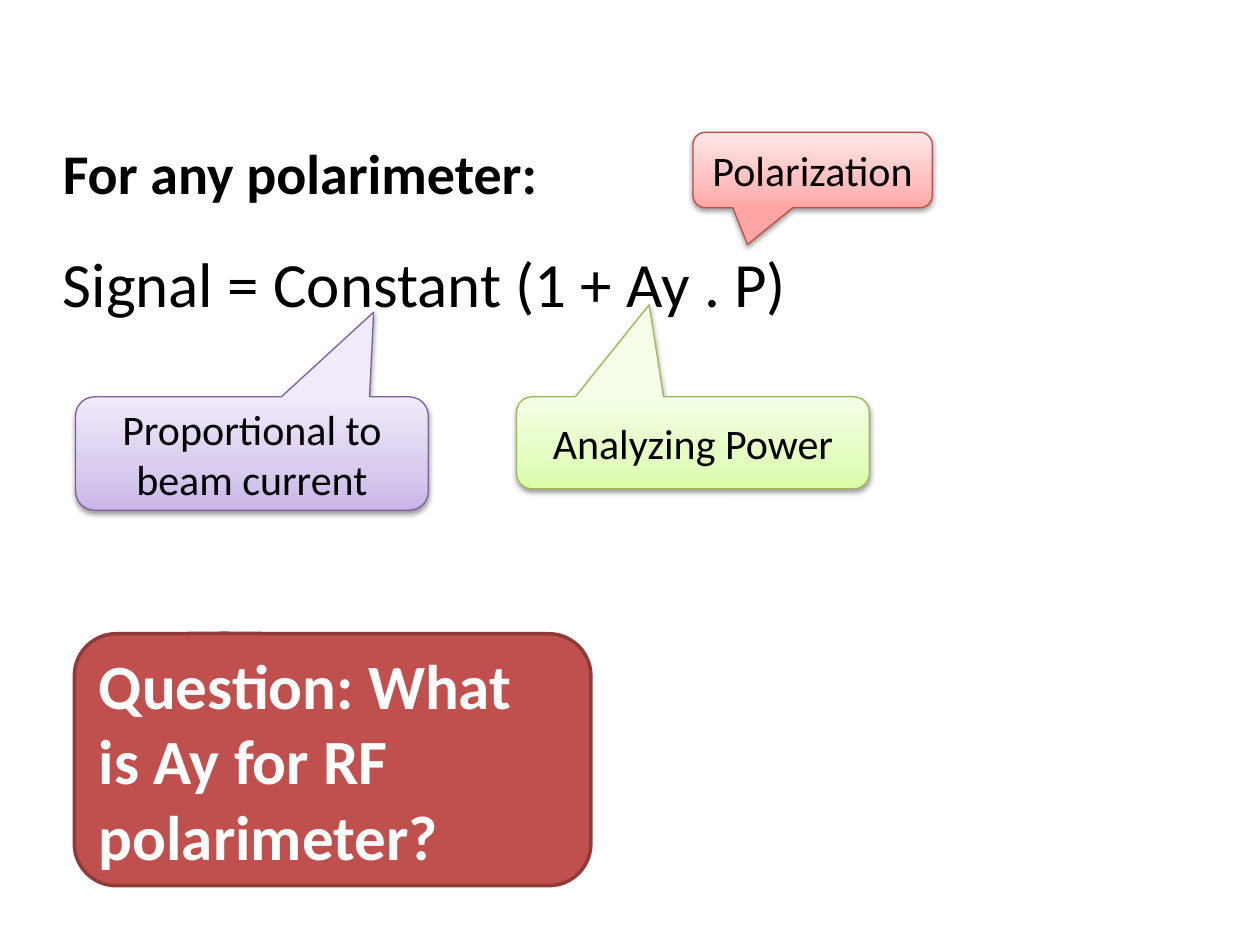
from copy import deepcopy

from lxml import etree
from pptx import Presentation
from pptx import util as u
from pptx.dml.color import RGBColor
from pptx.enum import shapes, text
from pptx.oxml.ns import qn


def color(value):
    return RGBColor.from_string(value)


def add_callout(left, top, width, height, pointer, words, size, line_color, line_width):
    shape = slide.shapes.add_shape(
        shapes.MSO_SHAPE.ROUNDED_RECTANGULAR_CALLOUT,
        u.Inches(left), u.Inches(top), u.Inches(width), u.Inches(height))
    shape.adjustments[0], shape.adjustments[1] = pointer
    shape.shadow.inherit = False
    shape.line.color.rgb = color(line_color)
    shape.line.width = u.Pt(line_width)
    frame = shape.text_frame
    frame.word_wrap = True
    frame.vertical_anchor = text.MSO_ANCHOR.MIDDLE
    paragraph = frame.paragraphs[0]
    paragraph.text = words
    paragraph.font.name = "Calibri"
    paragraph.font.size = u.Pt(size)
    return shape, paragraph


presentation = Presentation()
presentation.slide_width = u.Inches(10)
presentation.slide_height = u.Inches(7.5)
slide = presentation.slides.add_slide(presentation.slide_layouts[6])

# Heading and formula
box = slide.shapes.add_textbox(u.Inches(0.4), u.Inches(1.05), u.Inches(6), u.Inches(1.55))
frame = box.text_frame
frame.word_wrap = False
heading, formula = frame.paragraphs[0], frame.add_paragraph()
formula.space_before = u.Pt(22)
for paragraph, words, size, bold in [
    (heading, "For any polarimeter:", 32, True),
    (formula, "Signal = Constant (1 + Ay . P)", 36, False),
]:
    paragraph.text = words
    paragraph.font.name = "Calibri"
    paragraph.font.size = u.Pt(size)
    paragraph.font.bold = bold
    paragraph.font.color.rgb = color("000000")

# Gradient callouts explaining each term
terms = [
    (0.6, 3.15, 2.8, 0.9, (0.345, -1.247), "Proportional to beam current",
     "7D60A0", ("C9B5E8", "D8CBEE", "F0EAF9")),
    (4.1, 3.15, 2.8, 0.73, (-0.124, -1.501), "Analyzing Power",
     "98B955", ("DAFDA7", "E4FCC2", "F5FFE7")),
    (5.5, 1.05, 1.9, 0.6, (-0.272, 0.985), "Polarization",
     "BF4C48", ("FFA6A5", "FFC0BF", "FFE7E7")),
]
for left, top, width, height, pointer, words, line_color, stop_colors in terms:
    shape, paragraph = add_callout(
        left, top, width, height, pointer, words, 24, line_color, 0.75)
    paragraph.alignment = text.PP_ALIGN.CENTER
    paragraph.font.color.rgb = color("000000")

    # Three-stop gradient, darkest at the bottom
    shape.fill.gradient()
    shape.fill.gradient_angle = 90
    properties = shape._element.spPr
    stop_list = properties.find(qn("a:gradFill")).find(qn("a:gsLst"))
    stop_list.insert(1, deepcopy(stop_list[0]))
    for stop, position, value in zip(shape.fill.gradient_stops, (0, 0.35, 1), stop_colors):
        stop.position = position
        stop.color.rgb = color(value)

    # Soft shadow below
    shadow = etree.SubElement(
        properties.find(qn("a:effectLst")), qn("a:outerShdw"),
        blurRad=str(u.Pt(3.1)), dist=str(u.Pt(1.6)), dir="5400000", rotWithShape="0")
    shadow_color = etree.SubElement(shadow, qn("a:srgbClr"), val="000000")
    etree.SubElement(shadow_color, qn("a:alpha"), val="38000")

# Question
shape, paragraph = add_callout(
    0.59, 5.03, 4.1, 2, (-0.21, -0.502),
    "Question: What is Ay for RF polarimeter?", 36, "8E3B39", 2)
shape.fill.solid()
shape.fill.fore_color.rgb = color("C0504D")
paragraph.alignment = text.PP_ALIGN.LEFT
paragraph.font.bold = True
paragraph.font.color.rgb = color("FFFFFF")

presentation.save("out.pptx")
